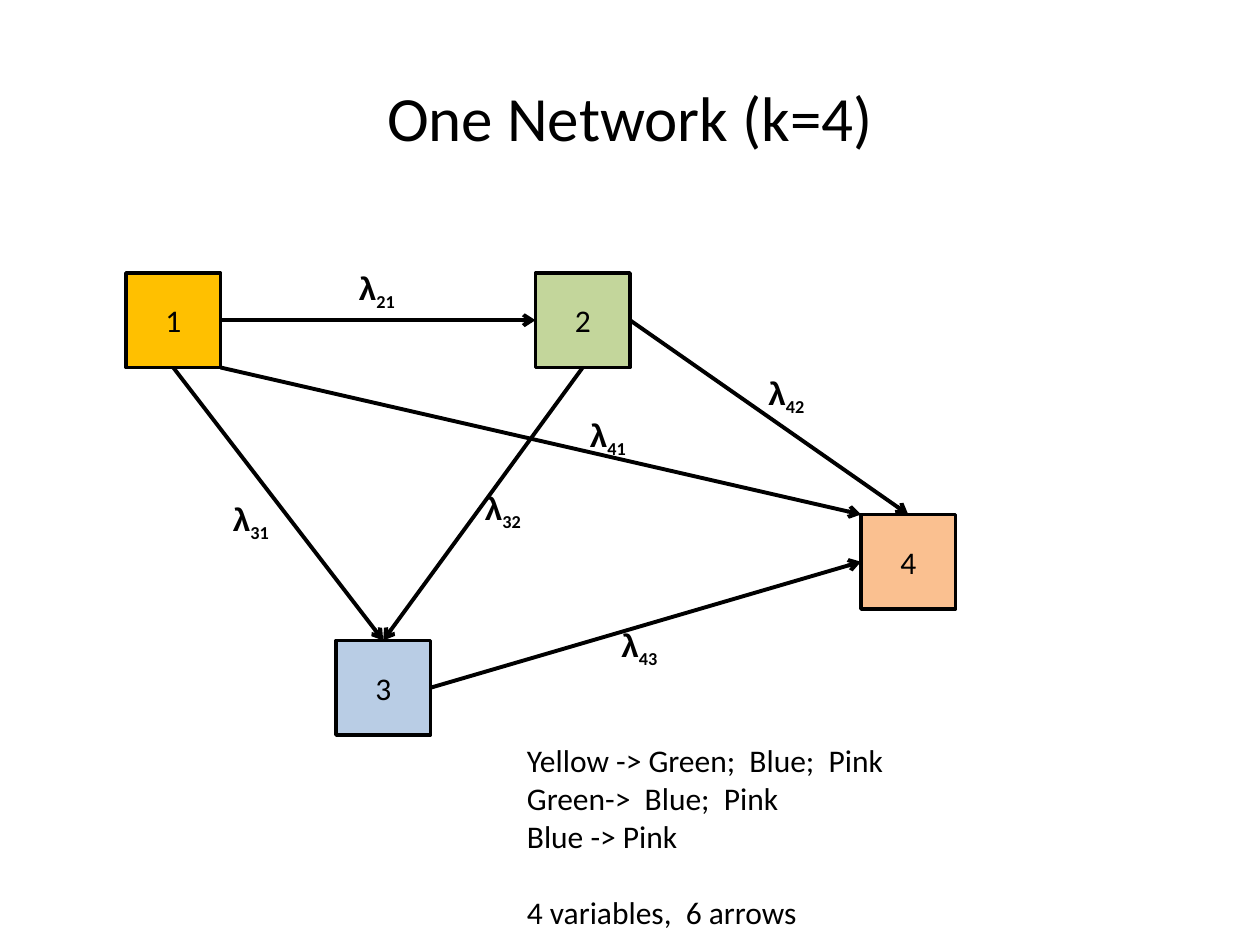
"""Build a slide showing one network of four variables and six arrows."""
from lxml import etree
from pptx import Presentation
from pptx.dml.color import RGBColor
from pptx.enum.shapes import MSO_CONNECTOR, MSO_SHAPE
from pptx.enum.text import MSO_ANCHOR, MSO_AUTO_SIZE, PP_ALIGN
from pptx.oxml.ns import qn
from pptx.util import Pt

PX = 914400 // 120
SIDE = 90
LINE = MSO_CONNECTOR.STRAIGHT
RECT = MSO_SHAPE.RECTANGLE
MIDDLE = MSO_ANCHOR.MIDDLE
CENTER = PP_ALIGN.CENTER
GROW = MSO_AUTO_SIZE.SHAPE_TO_FIT_TEXT
BOTTOM, LEFT, TOP, RIGHT = 2, 1, 0, 3
COLORS = {"black": "000000", "yellow": "FFC000", "green": "C3D69B",
          "blue": "B9CDE5", "pink": "FAC090"}


def style(run, size=18, name="Calibri", bold=False):
    run.font.size = Pt(size)
    run.font.name = name
    run.font.bold = bold
    run.font.color.rgb = RGBColor.from_string(COLORS["black"])


def textbox(x, y, w, h):
    box = slide.shapes.add_textbox(x * PX, y * PX, w * PX, h * PX)
    box.text_frame.word_wrap = False
    box.text_frame.auto_size = GROW
    return box.text_frame


deck = Presentation()
deck.slide_width, deck.slide_height = 1200 * PX, 900 * PX
slide = deck.slides.add_slide(deck.slide_layouts[5])

title = slide.shapes.title
title.left, title.top = 60 * PX, 36 * PX
title.width, title.height = 1080 * PX, 150 * PX
title.text_frame.text = "One Network (k=4)"
title.text_frame.vertical_anchor = MIDDLE
title.text_frame.paragraphs[0].alignment = CENTER
style(title.text_frame.paragraphs[0].runs[0], 36)

nodes = {}
for key, x, y, color in [(1, 120, 260, "yellow"), (2, 510, 260, "green"),
                         (3, 320, 610, "blue"), (4, 820, 490, "pink")]:
    node = slide.shapes.add_shape(RECT, x * PX, y * PX, SIDE * PX, SIDE * PX)
    node.shadow.inherit = False
    node.fill.solid()
    node.fill.fore_color.rgb = RGBColor.from_string(COLORS[color])
    node.line.color.rgb = RGBColor.from_string(COLORS["black"])
    node.line.width = Pt(2)
    node.text_frame.text = str(key)
    node.text_frame.vertical_anchor = MIDDLE
    node.text_frame.paragraphs[0].alignment = CENTER
    style(node.text_frame.paragraphs[0].runs[0])
    nodes[key] = node

for start, out, end, into in [(1, None, 4, None), (1, BOTTOM, 3, TOP),
                              (1, RIGHT, 2, LEFT), (2, RIGHT, 4, TOP),
                              (2, BOTTOM, 3, TOP), (3, RIGHT, 4, LEFT)]:
    tail, head = nodes[start], nodes[end]
    arrow = slide.shapes.add_connector(
        LINE, tail.left + tail.width, tail.top + tail.height,
        head.left, head.top)
    if out is not None:
        arrow.begin_connect(tail, out)
        arrow.end_connect(head, into)
    arrow.line.color.rgb = RGBColor.from_string(COLORS["black"])
    arrow.line.width = Pt(2.25)
    etree.SubElement(arrow.line._get_or_add_ln(), qn("a:tailEnd"), type="arrow")
    etree.SubElement(arrow._element.spPr, qn("a:effectLst"))

for index, x, y in [("21", 330, 250), ("31", 210, 470), ("42", 720, 350),
                    ("41", 550, 390), ("32", 450, 460), ("43", 580, 590)]:
    para = textbox(x, y, 61, 48).paragraphs[0]
    para.text = "λ"
    style(para.runs[0], name="Arial", bold=True)
    sub = para.add_run()
    sub.text = index
    style(sub, bold=True)
    sub.font._element.set("baseline", "-25000")

notes = textbox(490, 700, 368, 194)
notes.text = "\n".join(["Yellow -> Green;  Blue;  Pink", "Green->  Blue;  Pink",
                        "Blue -> Pink", "4 variables,  6 arrows"])
for para in notes.paragraphs:
    style(para.runs[0])
notes.paragraphs[-1].space_before = Pt(22)

deck.save("out.pptx")
